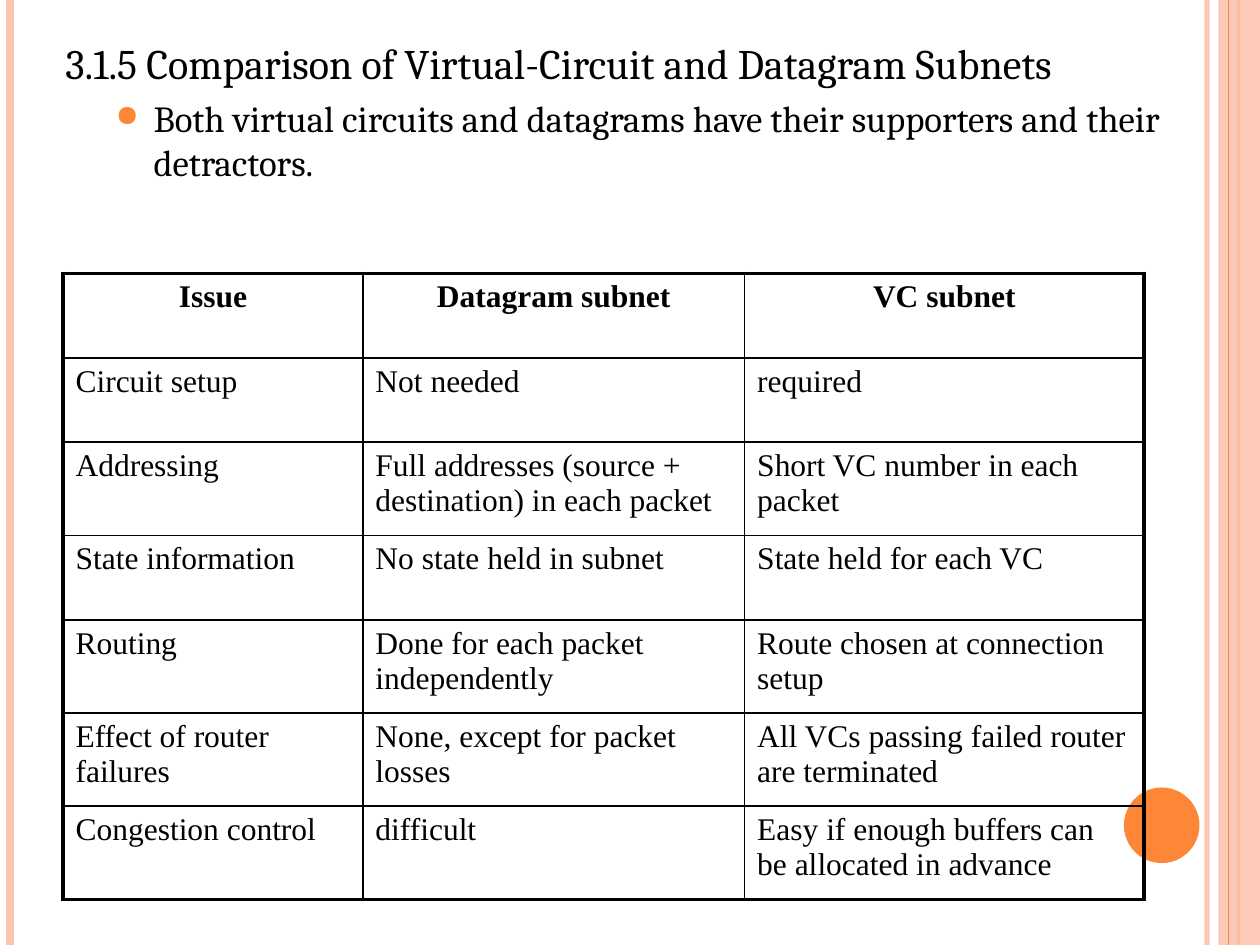
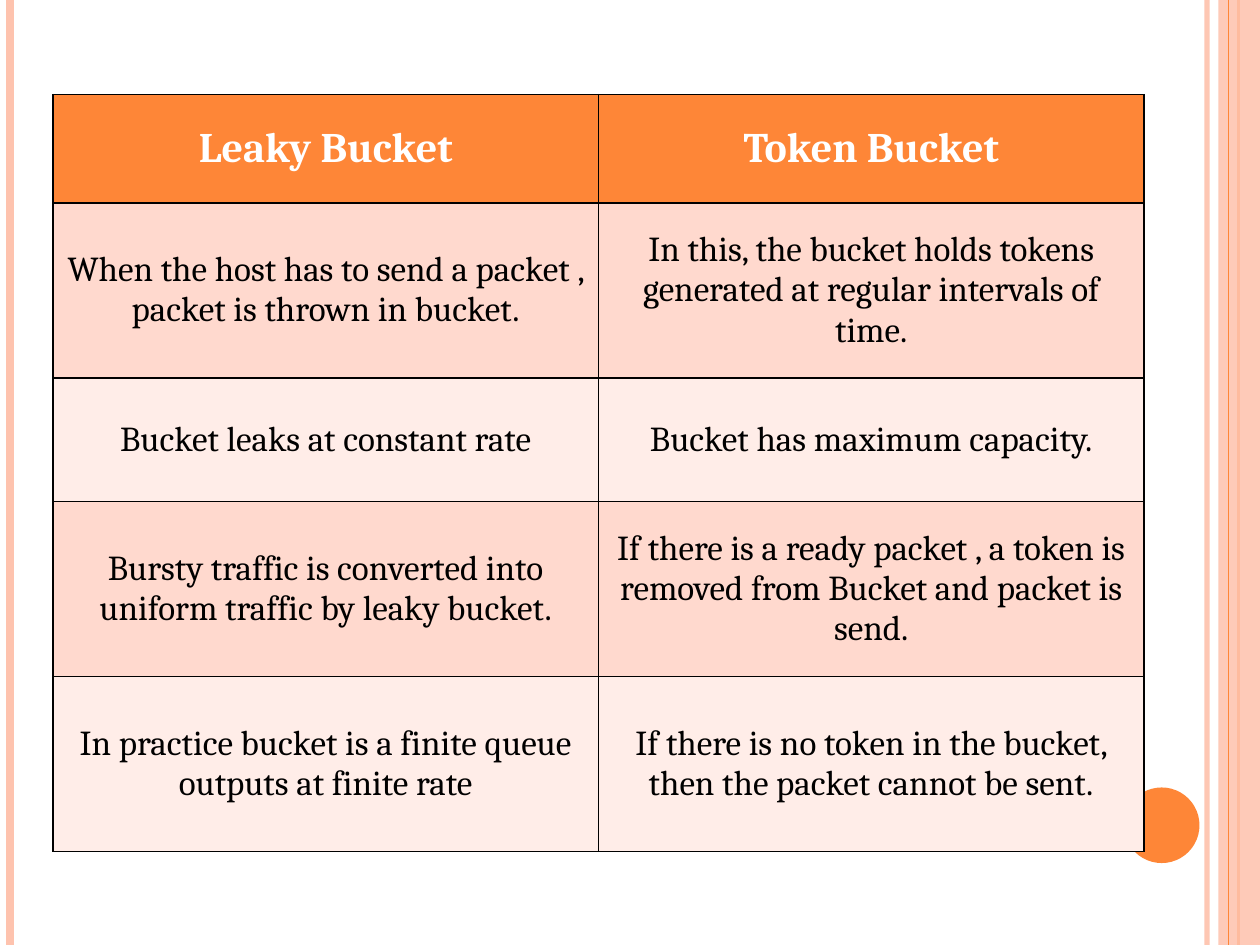
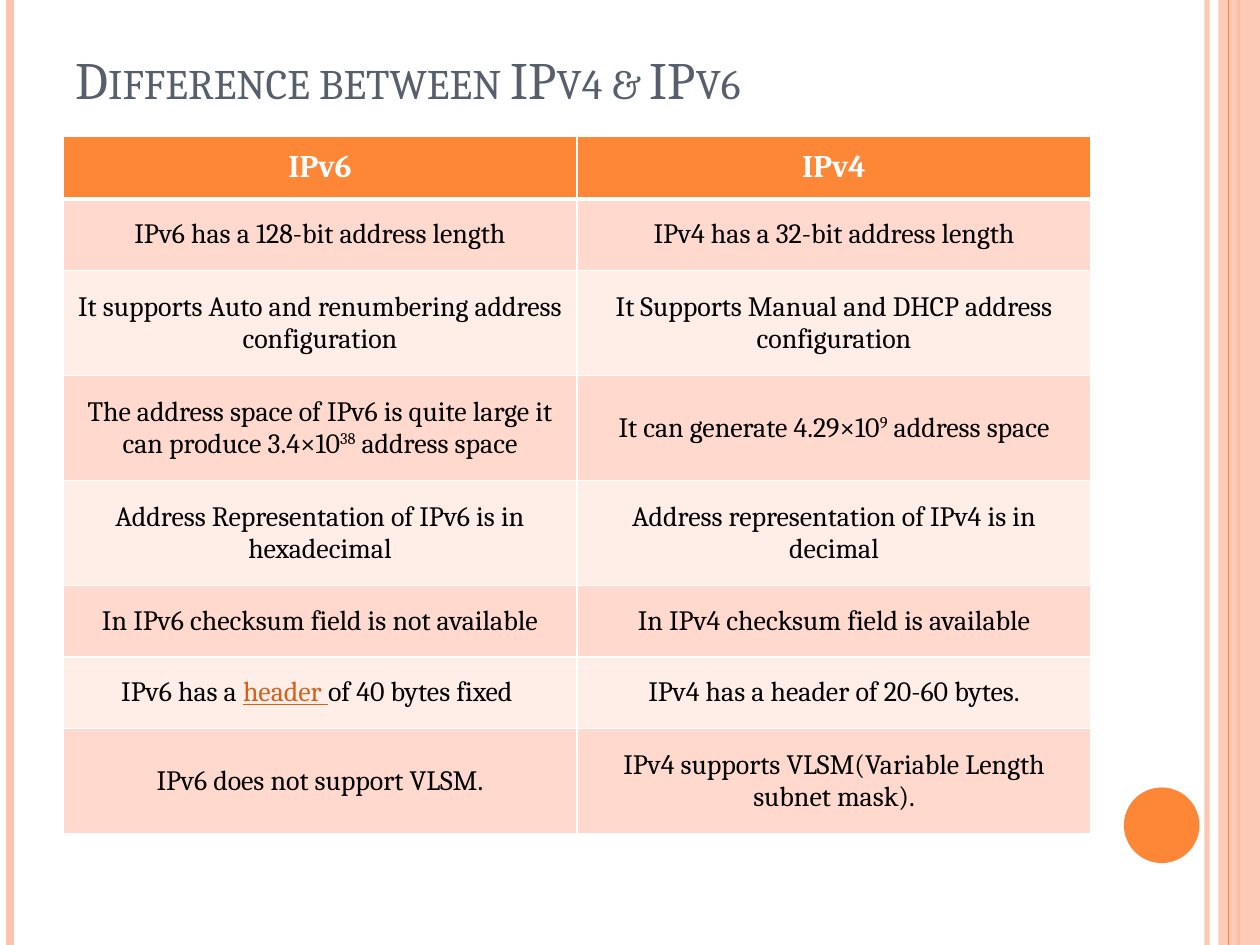
from lxml.etree import SubElement
from pptx import Presentation
from pptx.dml.color import RGBColor
from pptx.enum.shapes import MSO_CONNECTOR, MSO_SHAPE
from pptx.enum.text import MSO_ANCHOR, PP_ALIGN
from pptx.oxml.ns import qn
from pptx.util import Inches, Pt

ORANGE, PEACH, BLACK, WHITE = "FE8637", "FEC3AE", "000000", "FFFFFF"
SLATE, RUST = "575F6D", "D2611C"
BANDS = ["FFEDE8", "FFD9CE"]
SERIF, ROMAN = "Cambria", "Times New Roman"
WIDE, HIGH = 10, 7.5


def paint(fill, color, alpha=100):
    fill.solid()
    fill.fore_color.rgb = RGBColor.from_string(color)
    if alpha < 100:
        tint = fill._xPr.find(".//" + qn("a:srgbClr"))
        SubElement(tint, qn("a:alpha"), val=str(alpha * 1000))


def grid(slide, left, top, cols, rows, texts, sizes, font=SERIF,
         color=BLACK, edge=1, rule=1, filled=True):
    """Add a table; the part of a text between bars is a power or a link."""
    table = slide.shapes.add_table(
        len(rows), len(cols), Inches(left), Inches(top),
        Inches(sum(cols)), Inches(sum(rows))).table
    table.first_row = table.horz_banding = False
    for col, width in zip(table.columns, cols):
        col.width = Inches(width)
    for row, height in zip(table.rows, rows):
        row.height = Inches(height)
    for r, line in enumerate(texts):
        for c, text in enumerate(line):
            cell, head = table.cell(r, c), r == 0
            # Borders
            lines = {
                "L": edge if c == 0 else 1,
                "R": edge if c == len(cols) - 1 else 1,
                "T": edge if head else rule if r == 1 else 1,
                "B": rule if head else edge if r == len(rows) - 1 else 1}
            props = cell._tc.get_or_add_tcPr()
            for side, width in lines.items():
                ln = SubElement(props, qn("a:ln" + side), w=str(Pt(width)))
                solid = SubElement(ln, qn("a:solidFill"))
                SubElement(solid, qn("a:srgbClr"), val=color)
            # Fill and margins
            if filled:
                paint(cell.fill, ORANGE if head else BANDS[r % 2])
                cell.vertical_anchor = MSO_ANCHOR.MIDDLE
                cell.margin_top = cell.margin_bottom = Inches(0.1 if head else 0.15)
                cell.margin_left = cell.margin_right = Inches(
                    0.04 if head and c == 0 else 0.1)
            else:
                cell.fill.background()
            # Text
            para = cell.text_frame.paragraphs[0]
            if filled or head:
                para.alignment = PP_ALIGN.CENTER
            if not filled:
                para.space_before = Pt(sizes[1] * 0.2)
            para.font.name, para.font.bold = font, head
            para.font.size = Pt(sizes[0] if head else sizes[1])
            paint(para.font.fill, WHITE if head and filled else BLACK)
            for n, part in enumerate(text.split("|")):
                run = para.add_run()
                run.text = part
                if n == 1 and part.isdigit():
                    run._r.get_or_add_rPr().set("baseline", "30000")
                elif n == 1:
                    run.font.underline = True
                    paint(run.font.fill, RUST)


deck = Presentation()
deck.slide_width, deck.slide_height = Inches(WIDE), Inches(HIGH)

# Side rails, band and disc on every slide
rails = [(9.58, 3, PEACH, 93), (0.08, 4.5, PEACH, 100), (9.83, 1.5, ORANGE, 100),
         (9.67, None, PEACH, 87), (9.75, 0.75, ORANGE, 100)]
for _ in range(3):
    shapes = deck.slides.add_slide(deck.slide_layouts[6]).shapes
    for x, width, color, alpha in rails:
        if width:
            rail = shapes.add_connector(
                MSO_CONNECTOR.STRAIGHT, Inches(x), 0, Inches(x), Inches(HIGH))
            rail.line.width = Pt(width)
            paint(rail.line.fill, color, alpha)
            SubElement(rail._element.spPr, qn("a:effectLst"))
        else:
            band = shapes.add_shape(
                MSO_SHAPE.RECTANGLE, Inches(x), 0, Inches(WIDE - x), Inches(HIGH))
            paint(band.fill, color, alpha)
            band.line.fill.background()
            band.shadow.inherit = False
    disc = shapes.add_shape(
        MSO_SHAPE.OVAL, Inches(8.92), Inches(6.25), Inches(0.6), Inches(0.6))
    paint(disc.fill, ORANGE)
    disc.line.fill.background()
    disc.shadow.inherit = False

subnet, bucket, version = deck.slides

# Slide 1: heading with one bullet
frame = subnet.shapes.add_textbox(
    Inches(0.42), Inches(0.25), Inches(9.08), Inches(1.75)).text_frame
frame.word_wrap = True
notes = [
    ("3.1.5 Comparison of Virtual-Circuit and Datagram Subnets", 24, 6, 0.3),
    ("Both virtual circuits and datagrams have their supporters and their detractors.",
     21, 4.2, 0.7)]
for n, (text, size, gap, indent) in enumerate(notes):
    para = frame.add_paragraph() if n else frame.paragraphs[0]
    para.text, para.level = text, n
    para.space_before = Pt(gap)
    para.font.size, para.font.name = Pt(size), SERIF
    paint(para.font.fill, BLACK)
    props = para._p.get_or_add_pPr()
    props.set("marL", str(Inches(indent)))
    props.set("indent", str(Inches(-0.3)))
    if n:
        tint = SubElement(props, qn("a:buClr"))
        SubElement(tint, qn("a:srgbClr"), val=ORANGE)
        SubElement(props, qn("a:buSzPct"), val="80000")
        SubElement(props, qn("a:buChar"), char="●")
        props.append(props.find(qn("a:defRPr")))

# Slide 1: subnet table
grid(subnet, 0.5, 2.17, [2.38, 3.03, 3.17],
     [0.67, 0.67, 0.74, 0.67, 0.74, 0.74, 0.74], [
         ("Issue", "Datagram subnet", "VC subnet"),
         ("Circuit setup", "Not needed", "required"),
         ("Addressing", "Full addresses (source + destination) in each packet",
          "Short VC number in each packet"),
         ("State information", "No state held in subnet", "State held for each VC"),
         ("Routing", "Done for each packet independently",
          "Route chosen at connection setup"),
         ("Effect of router failures", "None, except for packet losses",
          "All VCs passing failed router are terminated"),
         ("Congestion control", "difficult",
          "Easy if enough buffers can be allocated in advance")],
     (18, 18), font=ROMAN, edge=2.25, filled=False)

# Slide 2: bucket table
grid(bucket, 0.42, 0.75, [4.33] * 2, [0.86, 1.39, 0.98, 1.39, 1.39], [
    ("Leaky Bucket", "Token Bucket"),
    ("When the host has to send a packet , packet is thrown in bucket.",
     "In this, the bucket holds tokens generated at regular intervals of time."),
    ("Bucket leaks at constant rate", "Bucket has maximum capacity."),
    ("Bursty traffic is converted into uniform traffic by leaky bucket.",
     "If there is a ready packet , a token is removed from Bucket and packet is send."),
    ("In practice bucket is a finite queue outputs at finite rate",
     "If there is no token in the bucket, then the packet cannot be sent.")],
    (24, 20))

# Slide 3: title in small capitals
frame = version.shapes.add_textbox(
    Inches(0.5), Inches(0.3), Inches(8.17), Inches(0.62)).text_frame
frame.word_wrap = True
frame.vertical_anchor = MSO_ANCHOR.BOTTOM
run = frame.paragraphs[0].add_run()
run.text = "Difference between IPv4 & IPv6"
run.font.size, run.font.name = Pt(30), SERIF
paint(run.font.fill, SLATE)
run._r.get_or_add_rPr().set("cap", "small")

# Slide 3: version table
grid(version, 0.5, 1.08, [4.08] * 2, [0.41] * 8, [
    ("IPv6", "IPv4"),
    ("IPv6 has a 128-bit address length", "IPv4 has a 32-bit address length"),
    ("It supports Auto and renumbering address configuration",
     "It Supports Manual and DHCP address configuration"),
    ("The address space of IPv6 is quite large it can produce 3.4×10|38| address space",
     "It can generate 4.29×10|9| address space"),
    ("Address Representation of IPv6 is in hexadecimal",
     "Address representation of IPv4 is in decimal"),
    ("In IPv6 checksum field is not available", "In IPv4 checksum field is available"),
    ("IPv6 has a |header |of 40 bytes fixed ", "IPv4 has a header of 20-60 bytes."),
    ("IPv6 does not support VLSM.", "IPv4 supports VLSM(Variable Length subnet mask).")],
    (18, 16), color=WHITE, rule=3)

deck.save("out.pptx")
